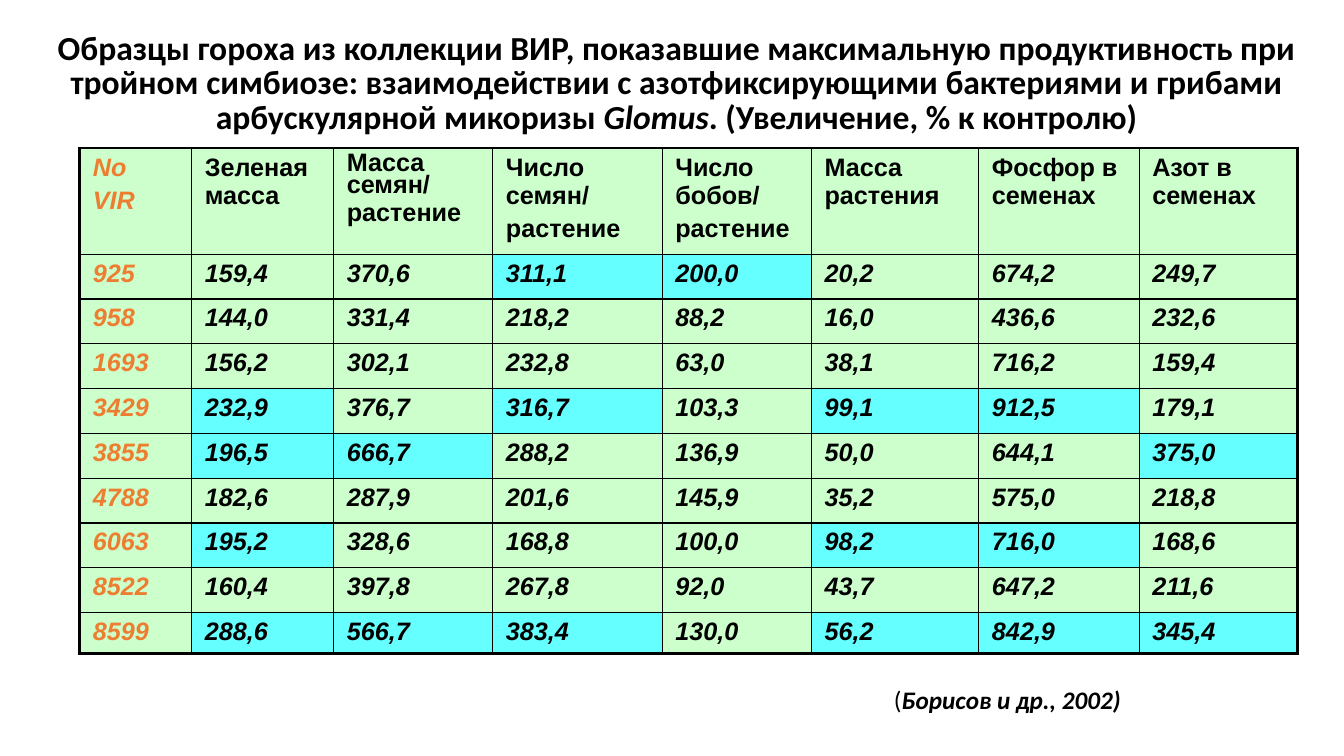
import pptx
import pptx.dml.color
import pptx.enum.text
import pptx.oxml
import pptx.oxml.ns
import pptx.util

Cm = pptx.util.Cm
Pt = pptx.util.Pt
RGBColor = pptx.dml.color.RGBColor

BLACK = RGBColor(0x00, 0x00, 0x00)
ORANGE = RGBColor(0xED, 0x7D, 0x31)
GREEN = RGBColor(0xCC, 0xFF, 0xCC)
CYAN = RGBColor(0x66, 0xFF, 0xFF)

COLUMN_WIDTHS = [2.82, 3.58, 4.01, 4.27, 3.76, 4.22, 4.04, 3.99]
HEADER_HEIGHT, ROW_HEIGHT, LAST_HEIGHT = 2.65, 1.13, 1.03
TIGHT_COLUMN = 2

HEADINGS = [
    ["No", "VIR"],
    ["Зеленая масса"],
    ["Масса семян/", "растение"],
    ["Число семян/", "растение"],
    ["Число бобов/", "растение"],
    ["Масса растения"],
    ["Фосфор в семенах"],
    ["Азот в семенах"],
]
SAMPLES = [
    ["925", "159,4", "370,6", "311,1", "200,0", "20,2", "674,2", "249,7"],
    ["958", "144,0", "331,4", "218,2", "88,2", "16,0", "436,6", "232,6"],
    ["1693", "156,2", "302,1", "232,8", "63,0", "38,1", "716,2", "159,4"],
    ["3429", "232,9", "376,7", "316,7", "103,3", "99,1", "912,5", "179,1"],
    ["3855", "196,5", "666,7", "288,2", "136,9", "50,0", "644,1", "375,0"],
    ["4788", "182,6", "287,9", "201,6", "145,9", "35,2", "575,0", "218,8"],
    ["6063", "195,2", "328,6", "168,8", "100,0", "98,2", "716,0", "168,6"],
    ["8522", "160,4", "397,8", "267,8", "92,0", "43,7", "647,2", "211,6"],
    ["8599", "288,6", "566,7", "383,4", "130,0", "56,2", "842,9", "345,4"],
]
BEST_COLUMNS = {
    "925": {3, 4},
    "3429": {1, 3, 5, 6},
    "3855": {1, 2, 7},
    "6063": {1, 5, 6},
    "8599": {1, 2, 3, 5, 6, 7},
}


def apply(target, values):
    for name, value in values.items():
        setattr(target, name, value)


class Page:
    title_font = {"name": "Calibri", "size": Pt(24), "bold": True}
    note_font = {"name": "Calibri", "size": Pt(18), "bold": False}
    cell_font = {"name": "Arial", "size": Pt(18), "bold": True}
    cell_margins = {
        "margin_left": Cm(0.33), "margin_right": Cm(0.33),
        "margin_top": Cm(0.13), "margin_bottom": Cm(0.13),
    }
    frame_format = {
        "word_wrap": True,
        "vertical_anchor": pptx.enum.text.MSO_ANCHOR.TOP,
        "auto_size": pptx.enum.text.MSO_AUTO_SIZE.SHAPE_TO_FIT_TEXT,
    }

    def __init__(self, deck):
        self.slide = deck.slides.add_slide(deck.slide_layouts[5])

    def add_span(self, para, text, font, color=BLACK, **changes):
        span = para.add_run()
        span.text = text
        apply(span.font, {**font, **changes})
        span.font.color.rgb = color

    def title(self, spans, left, top, width, height):
        box = self.slide.shapes.title
        apply(box, {"left": Cm(left), "top": Cm(top), "width": Cm(width), "height": Cm(height)})
        apply(box.text_frame, self.frame_format)
        para = box.text_frame.paragraphs[0]
        apply(para, {"alignment": pptx.enum.text.PP_ALIGN.CENTER, "line_spacing": 0.85})
        for text, italic in spans:
            self.add_span(para, text, self.title_font, italic=italic)

    def note(self, spans, left, top, width, height):
        box = self.slide.shapes.add_textbox(Cm(left), Cm(top), Cm(width), Cm(height))
        apply(box.text_frame, self.frame_format)
        para = box.text_frame.paragraphs[0]
        for text, strong in spans:
            self.add_span(para, text, self.note_font, bold=strong, italic=strong)

    def border(self, cell, side, width):
        line = pptx.oxml.parse_xml(
            f'<a:{side} {pptx.oxml.ns.nsdecls("a")} w="{Pt(width)}">'
            f'<a:solidFill><a:srgbClr val="{BLACK}"/></a:solidFill></a:{side}>'
        )
        cell._tc.get_or_add_tcPr().append(line)

    def cell(self, cell, lines, fill, color, italic, spacing, outer):
        apply(cell, self.cell_margins)
        for side, is_outer in outer.items():
            self.border(cell, side, 2.25 if is_outer else 1)
        cell.fill.solid()
        cell.fill.fore_color.rgb = fill
        for index, text in enumerate(lines):
            para = cell.text_frame.add_paragraph() if index else cell.text_frame.paragraphs[0]
            if index:
                para.space_before = Pt(3.6)
            para.line_spacing = spacing
            self.add_span(para, text, self.cell_font, color, italic=italic)

    def table(self, left, top):
        rows = [HEADINGS] + [[[value] for value in sample] for sample in SAMPLES]
        heights = [HEADER_HEIGHT] + [ROW_HEIGHT] * (len(SAMPLES) - 1) + [LAST_HEIGHT]
        table = self.slide.shapes.add_table(
            len(rows), len(HEADINGS), Cm(left), Cm(top),
            Cm(sum(COLUMN_WIDTHS)), Cm(sum(heights)),
        ).table
        apply(table, {"first_row": False, "horz_banding": False})
        for column, width in zip(table.columns, COLUMN_WIDTHS):
            column.width = Cm(width)
        for row, height in zip(table.rows, heights):
            row.height = Cm(height)
        for r, row in enumerate(rows):
            best = BEST_COLUMNS.get(row[0][0], set())
            for c, lines in enumerate(row):
                self.cell(
                    table.cell(r, c), lines,
                    fill=CYAN if c in best else GREEN,
                    color=BLACK if c else ORANGE,
                    italic=r > 0 or c == 0,
                    spacing=0.8 if r == 0 and c == TIGHT_COLUMN else 1.0,
                    outer={
                        "lnL": c == 0, "lnR": c == len(row) - 1,
                        "lnT": r == 0, "lnB": r == len(rows) - 1,
                    },
                )


def main():
    deck = pptx.Presentation()
    apply(deck, {"slide_width": Cm(33.87), "slide_height": Cm(19.05)})
    page = Page(deck)
    page.table(2.01, 3.73)
    page.title(
        [
            ("Образцы гороха из коллекции ВИР, показавшие максимальную продуктивность "
             "при тройном симбиозе: взаимодействии с азотфиксирующими бактериями и "
             "грибами арбускулярной микоризы ", False),
            ("Glomus", True),
            (". (Увеличение, % к контролю)", False),
        ],
        1.19, 0.71, 31.72, 2.87,
    )
    page.note([("(", False), ("Борисов и др., 2002)", True)], 22.28, 17.12, 10.67, 1.02)
    deck.save("out.pptx")


if __name__ == "__main__":
    main()
